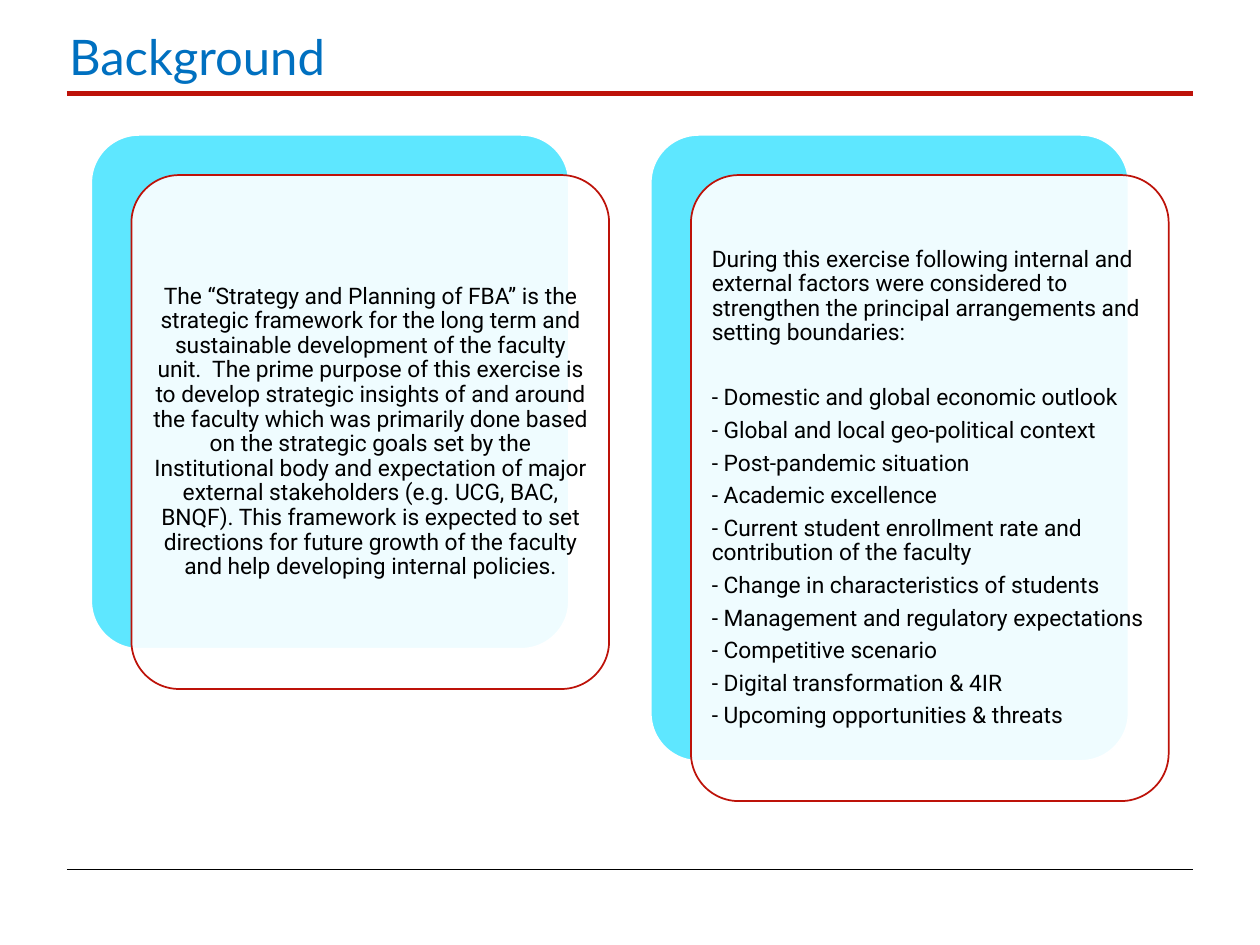
from dataclasses import dataclass

from lxml.etree import SubElement
from pptx import Presentation
from pptx.dml.color import RGBColor as Rgb
from pptx.enum.shapes import MSO_CONNECTOR as Link, MSO_SHAPE as Shape
from pptx.enum.text import MSO_ANCHOR as Anchor, MSO_AUTO_SIZE as Fit, PP_ALIGN as Align
from pptx.oxml.ns import qn
from pptx.util import Cm, Pt


@dataclass(frozen=True)
class Theme:
    blue: str = "0070C0"
    red: str = "BD1209"
    cyan: str = "5EE7FF"
    white: str = "FFFFFF"
    black: str = "000000"
    head: str = "Lato"
    body: str = "Roboto"
    head_size: float = 28
    body_size: float = 13


class Deck:
    def __init__(self, theme):
        self.theme = theme
        self.prs = Presentation()
        self.prs.slide_width, self.prs.slide_height = Cm(25.4), Cm(19.05)
        self.slide = self.prs.slides.add_slide(self.prs.slide_layouts[5])

    def add_run(self, para, text, font, size, color):
        run = para.add_run()
        run.text = text
        run.font.name, run.font.size = font, Pt(size)
        run.font.color.rgb = Rgb.from_string(color)

    def title(self, text, left, top, width, height):
        box = self.slide.shapes.title
        box.left, box.top, box.width, box.height = map(Cm, (left, top, width, height))
        frame = box.text_frame
        frame.auto_size = Fit.NONE
        frame.vertical_anchor = Anchor.TOP
        para = frame.paragraphs[0]
        para.alignment, para.line_spacing = Align.LEFT, 0.85
        look = self.theme
        self.add_run(para, text, look.head, look.head_size, look.blue)

    def rule(self, left, right, y, color, weight):
        line = self.slide.shapes.add_connector(
            Link.STRAIGHT, Cm(left), Cm(y), Cm(right), Cm(y))
        line.line.color.rgb, line.line.width = Rgb.from_string(color), Pt(weight)
        SubElement(line._element.spPr, qn("a:effectLst"))

    def card(self, left, top, width, height, edge, fill, alpha=None):
        """Draw a rounded card; alpha is the fill's opacity in percent."""
        card = self.slide.shapes.add_shape(
            Shape.ROUNDED_RECTANGLE, *map(Cm, (left, top, width, height)))
        card.adjustments[0] = 0.1
        card.shadow.inherit = False
        card.fill.solid()
        card.fill.fore_color.rgb = Rgb.from_string(fill)
        card.line.color.rgb, card.line.width = Rgb.from_string(edge), Pt(1)
        if alpha is not None:
            tint = card._element.spPr.find(qn("a:solidFill"))[0]
            SubElement(tint, qn("a:alpha"), val=str(alpha * 1000))

    def text(self, left, top, width, height, lines, align, gaps):
        """Add one paragraph per line, with its gap below in points."""
        box = self.slide.shapes.add_textbox(*map(Cm, (left, top, width, height)))
        frame = box.text_frame
        frame.word_wrap, frame.vertical_anchor = True, Anchor.MIDDLE
        frame.margin_left = frame.margin_right = Cm(0.13)
        frame.margin_top = frame.margin_bottom = Cm(0.13)
        look = self.theme
        for i, (line, gap) in enumerate(zip(lines, gaps)):
            para = frame.add_paragraph() if i else frame.paragraphs[0]
            para.alignment, para.line_spacing = align, 0.9
            para.space_after = Pt(gap)
            self.add_run(para, line, look.body, look.body_size, look.black)

    def panel(self, left, height, lines, align, gaps):
        """Stack a tinted card, a clear card shifted from it, and the text."""
        top, width, shift, inset = 2.72, 9.63, 0.81, 0.29
        look = self.theme
        self.card(left, top, width, height, look.white, look.cyan)
        left, top = left + shift, top + shift
        self.card(left, top, width, height, look.red, look.white, 90)
        self.text(left + inset, top + inset, width - 2 * inset,
                  height - 2 * inset, lines, align, gaps)


PURPOSE = (
    "The “Strategy and Planning of FBA” is the strategic framework for the long "
    "term and sustainable development of the faculty unit.  The prime purpose of "
    "this exercise is to develop strategic insights of and around the faculty which "
    "was primarily done based on the strategic goals set by the Institutional body "
    "and expectation of major external stakeholders (e.g. UCG, BAC, BNQF). This "
    "framework is expected to set directions for future growth of the faculty and "
    "help developing internal policies."
)
INTRO = (
    "During this exercise following internal and external factors were considered "
    "to strengthen the principal arrangements and setting boundaries:"
)
FACTORS = [
    "- Domestic and global economic outlook",
    "- Global and local geo-political context",
    "- Post-pandemic situation",
    "- Academic excellence",
    "- Current student enrollment rate and contribution of the faculty",
    "- Change in characteristics of students",
    "- Management and regulatory expectations",
    "- Competitive scenario",
    "- Digital transformation & 4IR",
    "- Upcoming opportunities & threats",
]


def main():
    theme = Theme()
    deck = Deck(theme)
    deck.title("Background", 1.14, 0.58, 15.77, 2.54)
    deck.rule(1.35, 24.05, 1.88, theme.red, 3)
    deck.rule(1.35, 24.05, 17.53, theme.black, 0.5)
    gap, wide = 4.55, 23.1
    deck.panel(1.84, 10.36, [PURPOSE], Align.CENTER, [gap])
    deck.panel(13.12, 12.62, [INTRO, *FACTORS], Align.LEFT,
               [wide] + [gap] * len(FACTORS))
    deck.prs.save("out.pptx")


if __name__ == "__main__":
    main()
